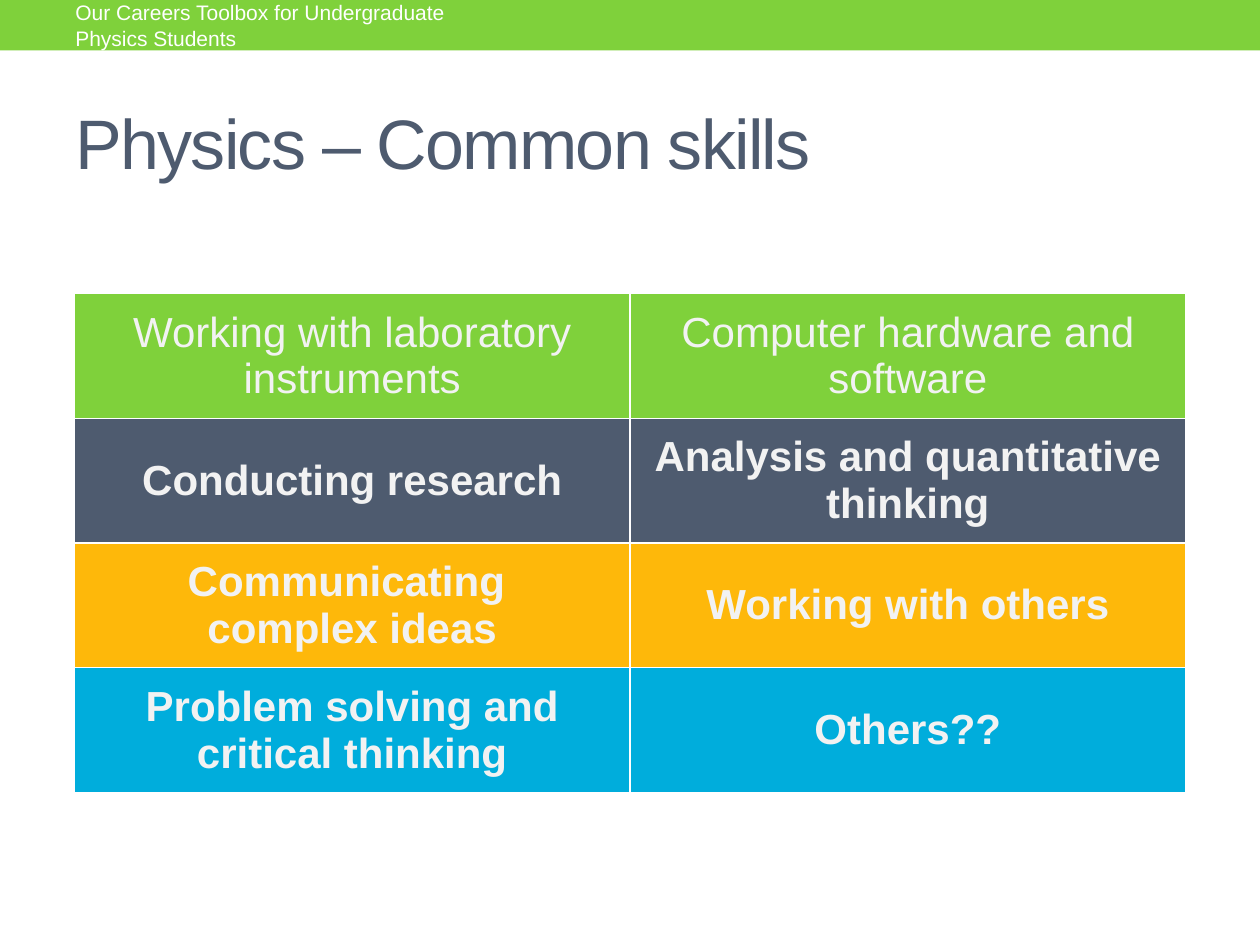
from dataclasses import dataclass

from lxml.etree import SubElement
from pptx import Presentation
from pptx.dml.color import RGBColor
from pptx.enum.shapes import MSO_SHAPE as Shape
from pptx.enum.text import MSO_ANCHOR as Anchor, MSO_AUTO_SIZE as AutoSize, PP_ALIGN as Align
from pptx.oxml.ns import qn
from pptx.util import Inches, Pt


@dataclass(frozen=True)
class Theme:
    font: str = "Arial"
    green: str = "7FD13B"
    slate: str = "4E5B6F"
    amber: str = "FEB80A"
    blue: str = "00ADDC"
    white: str = "FFFFFF"
    pale: str = "F2F2F2"
    title_size: int = 40
    table_size: int = 24
    banner_size: int = 12
    border: int = 1


class SlideBuilder:
    def __init__(self, presentation, theme):
        self.theme = theme
        self.width = presentation.slide_width
        self.height = presentation.slide_height
        self.slide = presentation.slides.add_slide(presentation.slide_layouts[5])

    def box(self, left, top, width, height):
        return (round(left * self.width), round(top * self.height),
                round(width * self.width), round(height * self.height))

    def set_text(self, text_frame, text, size, color, align=Align.LEFT, bold=False):
        text_frame.word_wrap = True
        text_frame.text = text
        paragraph = text_frame.paragraphs[0]
        paragraph.alignment = align
        for run in paragraph.runs:
            run.font.name = self.theme.font
            run.font.size = Pt(size)
            run.font.bold = bold
            run.font.color.rgb = RGBColor.from_string(color)
        return paragraph

    def band(self, area, color):
        shape = self.slide.shapes.add_shape(Shape.RECTANGLE, *self.box(*area))
        shape.shadow.inherit = False
        shape.fill.solid()
        shape.fill.fore_color.rgb = RGBColor.from_string(color)
        shape.line.fill.background()

    def title(self, area, text, spacing):
        title = self.slide.shapes.title
        title.left, title.top, title.width, title.height = self.box(*area)
        frame = title.text_frame
        frame.auto_size = AutoSize.NONE
        frame.vertical_anchor = Anchor.MIDDLE
        paragraph = self.set_text(frame, text, self.theme.title_size, self.theme.slate)
        for run in paragraph.runs:
            run.font._element.set("spc", str(spacing * 100))

    def label(self, area, text):
        frame = self.slide.shapes.add_textbox(*self.box(*area)).text_frame
        frame.vertical_anchor = Anchor.MIDDLE
        self.set_text(frame, text, self.theme.banner_size, self.theme.white)

    def outline(self, cell):
        properties = cell._tc.get_or_add_tcPr()
        for position, side in enumerate(("a:lnL", "a:lnR", "a:lnT", "a:lnB")):
            line = SubElement(properties, qn(side), w=str(Pt(self.theme.border)))
            fill = SubElement(line, qn("a:solidFill"))
            SubElement(fill, qn("a:srgbClr"), val=self.theme.white)
            properties.insert(position, line)

    def table(self, area, rows, colors):
        frame = self.slide.shapes.add_table(len(rows), len(rows[0]), *self.box(*area))
        for row_index, (row, color) in enumerate(zip(rows, colors)):
            for column_index, text in enumerate(row):
                cell = frame.table.cell(row_index, column_index)
                cell.vertical_anchor = Anchor.MIDDLE
                cell.fill.solid()
                cell.fill.fore_color.rgb = RGBColor.from_string(color)
                self.outline(cell)
                self.set_text(cell.text_frame, text, self.theme.table_size,
                              self.theme.pale, Align.CENTER, bold=row_index > 0)


def main():
    presentation = Presentation()
    presentation.slide_width = Inches(10)
    presentation.slide_height = Inches(7.5)
    theme = Theme()
    builder = SlideBuilder(presentation, theme)

    banner_height = 0.4 / 7.5
    builder.band((0, 0, 1, banner_height), theme.green)
    skills = [
        ("Working with laboratory instruments", "Computer hardware and software"),
        ("Conducting research", "Analysis and quantitative thinking"),
        ("Communicating \vcomplex ideas", "Working with others"),
        ("Problem solving and critical thinking", "Others??"),
    ]
    row_height = 0.99 / 7.5
    builder.table((0.059, 2.33 / 7.5, 0.882, row_height * len(skills)), skills,
                  (theme.green, theme.slate, theme.amber, theme.blue))
    builder.title((0.05, 0.58 / 7.5, 0.9, 1.08 / 7.5), "Physics – Common skills", spacing=-1)
    builder.label((0.05, 0.02 / 7.5, 0.317, 0.36 / 7.5),
                  "Our Careers Toolbox for Undergraduate Physics Students")
    presentation.save("out.pptx")


if __name__ == "__main__":
    main()
